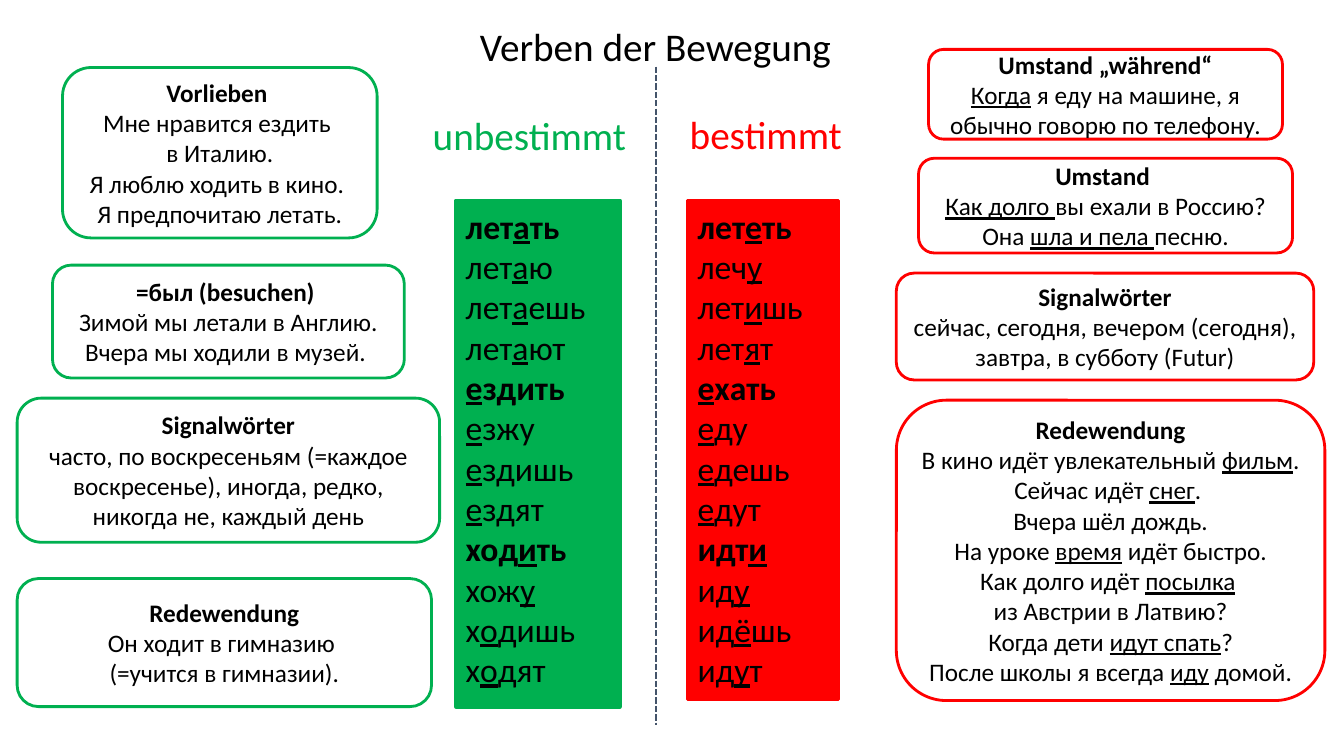
from lxml.etree import SubElement
from pptx import Presentation
from pptx.dml.color import RGBColor
from pptx.enum.dml import MSO_LINE
from pptx.enum.shapes import MSO_CONNECTOR as Connector, MSO_SHAPE as Shape
from pptx.enum.text import MSO_ANCHOR as Anchor, MSO_AUTO_SIZE as AutoSize, PP_ALIGN as Align
from pptx.oxml.ns import qn
from pptx.util import Inches, Pt

GREEN, RED, WHITE, BLACK, SLATE = "00B050", "FF0000", "FFFFFF", "000000", "44546A"

UNBESTIMMT = ["*лет_а_ть", "лет_а_ю", "лет_а_ешь", "лет_а_ют",
              "*_е_здить", "_е_зжу", "_е_здишь", "_е_здят",
              "*ход_и_ть", "хож_у_", "х_о_дишь", "х_о_дят"]
BESTIMMT = ["*лет_е_ть", "леч_у_", "лет_и_шь", "лет_я_т",
            "*_е_хать", "_е_ду", "_е_дешь", "_е_дут",
            "*идт_и_", "ид_у_", "ид_ё_шь", "ид_у_т"]

GREEN_CARDS = [
    ((0.62, 0.67, 3.12, 1.69),
     ["*Vorlieben ", "Мне нравится ездить \nв Италию.",
      "Я люблю ходить в кино. ", "Я предпочитаю летать."]),
    ((0.52, 2.63, 3.49, 1.12),
     ["*=был (besuchen) ", "Зимой мы летали в Англию.", "Вчера мы ходили в музей. "]),
    ((0.17, 3.95, 4.19, 1.43),
     ["*Signalwörter",
      "часто, по воскресеньям (=каждое воскресенье), иногда, редко, никогда не, каждый день"]),
    ((0.17, 5.74, 4.11, 1.27),
     ["*Redewendung", "Он ходит в гимназию \n(=учится в гимназии)."]),
]
RED_CARDS = [
    ((9.21, 0.49, 3.51, 0.89),
     ["*Umstand „während“", "_Когда_ я еду на машине, я обычно говорю по телефону."]),
    ((9.11, 1.57, 3.71, 0.94),
     ["*Umstand ", "_Как долго _вы ехали в Россию? Она _шла и пела _песню."]),
    ((8.89, 2.71, 4.14, 1.06),
     ["*Signalwörter", "сейчас, сегодня, вечером (сегодня), завтра, в субботу (Futur)"]),
    ((8.89, 3.97, 4.25, 2.98),
     ["*Redewendung", "В кино идёт увлекательный _фильм_.", "Сейчас идёт _снег_. ",
      "Вчера шёл дождь.", "На уроке _время_ идёт быстро.", "Как долго идёт _посылка_ ",
      "из Австрии в Латвию?", "Когда дети _идут спать_?",
      "После школы я всегда _иду_ домой."]),
]


def color(value):
    """Turn a hex string into a colour."""
    return RGBColor.from_string(value)


def inches(box):
    """Turn a box of numbers into lengths."""
    return [Inches(value) for value in box]


def add_span(para, text, size, ink, bold, underline):
    """Add one formatted run to a paragraph."""
    span = para.add_run()
    span.text = text
    span.font.name, span.font.size = "Calibri", Pt(size)
    span.font.bold, span.font.underline = bold, underline
    span.font.color.rgb = color(ink)


def write(shape, lines, size=18, ink=BLACK, align=Align.CENTER, anchor=Anchor.TOP, wrap=True):
    """Write lines; a leading * makes one bold, and _ pairs enclose underlined words."""
    frame = shape.text_frame
    frame.auto_size = AutoSize.NONE
    frame.word_wrap, frame.vertical_anchor = wrap, anchor
    for number, line in enumerate(lines):
        para = frame.paragraphs[0] if number == 0 else frame.add_paragraph()
        para.alignment = align
        for row, part in enumerate(line.removeprefix("*").split("\n")):
            if row:
                para.add_line_break()
            for position, text in enumerate(part.split("_")):
                if text:
                    add_span(para, text, size, ink, line.startswith("*"), position % 2 == 1)


def add_panel(page, kind, box, edge, width, fill=None):
    """Add an outlined shape, filled or open."""
    panel = page.shapes.add_shape(kind, *inches(box))
    panel.shadow.inherit = False
    if fill:
        panel.fill.solid()
        panel.fill.fore_color.rgb = color(fill)
    else:
        panel.fill.background()
    panel.line.color.rgb = color(edge)
    panel.line.width = Pt(width)
    return panel


def add_title(page, box, text):
    """Place and format the title placeholder."""
    title = page.shapes.title
    title.left, title.top, title.width, title.height = inches(box)
    write(title, [text], size=28, wrap=False)


def add_divider(page, x, top, bottom):
    """Draw the dashed line between the two kinds of verb."""
    divider = page.shapes.add_connector(Connector.STRAIGHT, *inches((x, top, x, bottom)))
    divider.line.color.rgb = color(SLATE)
    divider.line.width = Pt(1.5)
    divider.line.dash_style = MSO_LINE.SQUARE_DOT
    SubElement(divider.element.spPr, qn("a:effectLst"))


def add_verbs(page, box, verbs, hue, width):
    """Add a filled column of verb forms."""
    column = add_panel(page, Shape.RECTANGLE, box, hue, width, fill=hue)
    write(column, verbs, size=24, align=Align.LEFT)


def add_heading(page, box, text, hue):
    """Add the coloured heading of a verb column."""
    heading = page.shapes.add_textbox(*inches(box))
    write(heading, [text], size=28, ink=hue, wrap=False)


def add_cards(page, cards, hue, fill=None):
    """Add the rounded cards of one side."""
    for box, lines in cards:
        card = add_panel(page, Shape.ROUNDED_RECTANGLE, box, hue, 2, fill)
        write(card, lines, anchor=Anchor.MIDDLE)


def main():
    """Build and save the slide."""
    deck = Presentation()
    deck.slide_width, deck.slide_height = Inches(13.33), Inches(7.5)
    page = deck.slides.add_slide(deck.slide_layouts.get_by_name("Title Only"))
    add_divider(page, 6.51, 0.66, 7.19)
    add_verbs(page, (4.52, 1.99, 1.63, 5.02), UNBESTIMMT, GREEN, 3)
    add_verbs(page, (6.82, 1.99, 1.5, 4.95), BESTIMMT, RED, 2.25)
    add_heading(page, (3.98, 1.06, 2.54, 1.04), "unbestimmt", GREEN)
    add_heading(page, (6.56, 1.05, 2.07, 0.57), "bestimmt", RED)
    add_cards(page, GREEN_CARDS, GREEN)
    add_cards(page, RED_CARDS, RED, fill=WHITE)
    add_title(page, (4.17, 0.17, 4.66, 1.04), "Verben der Bewegung")
    deck.save("out.pptx")


if __name__ == "__main__":
    main()
